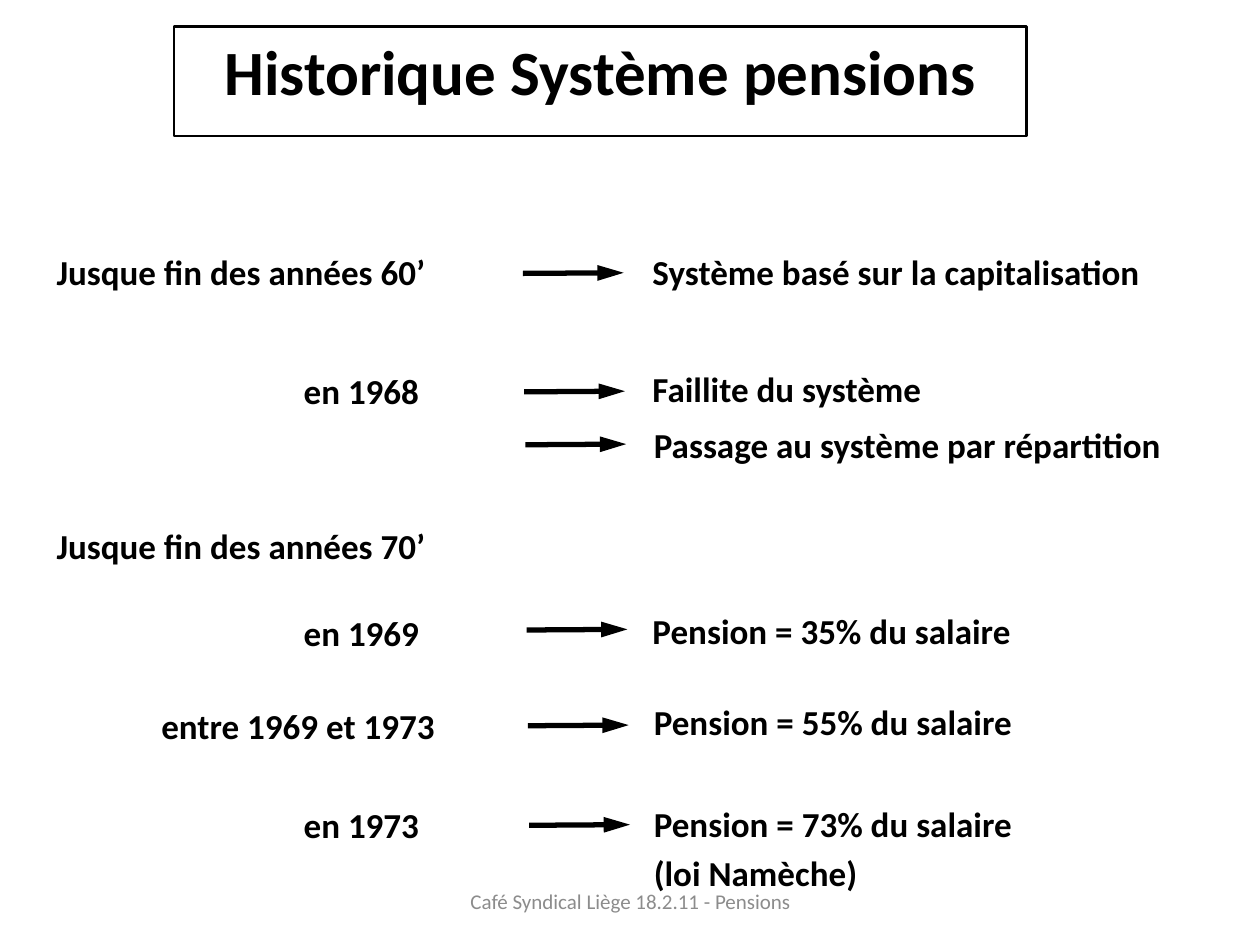
from lxml.etree import SubElement
from pptx import Presentation
from pptx.dml.color import RGBColor
from pptx.enum.shapes import MSO_CONNECTOR, MSO_SHAPE
from pptx.enum.text import MSO_ANCHOR, PP_ALIGN
from pptx.oxml.ns import qn
from pptx.util import Inches, Pt

COLORS = {"ink": "000000", "footer": "8C8C8C"}
FONT = "Calibri"

# The page is a grid of 100 columns by 75 rows of square cells.
CELL = Inches(10) // 100
INSET = 1
BOX_ROWS = 5.5
ARROW_COLUMNS = 8
ARROW_RISE = 0.05

# text, left column, top row, indent in columns
PERIODS = [
    ("Jusque fin des années 60’", 3.5, 19.4, 0),
    ("en 1968", 4.3, 28.8, 18.8),
    ("Jusque fin des années 70’", 3.5, 41.1, 0),
    ("en 1969", 4.3, 48, 18.8),
    ("entre 1969 et 1973", 4.3, 55.4, 7.5),
    ("en 1973", 4.3, 63.3, 18.8),
]
# text, left column, top row, width in columns
OUTCOMES = [
    ("Système basé sur la capitalisation", 50.8, 19.4, 47.2),
    ("Faillite du système", 50.8, 28.7, 47.2),
    ("Passage au système par répartition", 50.9, 33.1, 49.1),
    ("Pension = 35% du salaire", 50.8, 47.9, 47.2),
    ("Pension = 55% du salaire", 50.9, 55.1, 47.2),
    ("Pension = 73% du salaire", 50.9, 63.2, 47.2),
    ("(loi Namèche)", 50.9, 67.1, 47.2),
]
ARROW_ROWS = [21.7, 31.1, 35.3, 50, 57.6, 65.5]


def cells(*counts):
    return [round(count * CELL) for count in counts]


def write(shape, text, size, color="ink", bold=True, align=PP_ALIGN.LEFT,
          anchor=MSO_ANCHOR.TOP, indent=0):
    frame = shape.text_frame
    frame.word_wrap = True
    frame.vertical_anchor = anchor
    frame.margin_left, = cells(INSET + indent)
    para = frame.paragraphs[0]
    para.text = text
    para.alignment = align
    para.font.name = FONT
    para.font.size = Pt(size)
    para.font.bold = bold
    para.font.color.rgb = RGBColor.from_string(COLORS[color])


def add_title(page, box):
    frame = page.shapes.add_shape(MSO_SHAPE.RECTANGLE, *cells(*box))
    frame.shadow.inherit = False
    frame.fill.background()
    frame.line.color.rgb = RGBColor.from_string(COLORS["ink"])
    frame.line.width = Pt(1.5)
    write(frame, "Historique Système pensions", 36, align=PP_ALIGN.CENTER)


def add_entry(page, box, text, indent=0):
    write(page.shapes.add_textbox(*cells(*box)), text, 20, indent=indent)


def add_arrow(page, left, row):
    arrow = page.shapes.add_connector(
        MSO_CONNECTOR.STRAIGHT,
        *cells(left, row, left + ARROW_COLUMNS, row - ARROW_RISE))
    arrow.line.color.rgb = RGBColor.from_string(COLORS["ink"])
    arrow.line.width = Pt(3)
    SubElement(arrow.line._get_or_add_ln(), qn("a:tailEnd"),
               type="triangle", w="med", len="lg")
    SubElement(arrow._element.spPr, qn("a:effectLst"))


def add_timeline(page):
    for text, left, top, indent in PERIODS:
        add_entry(page, (left, top, 37.8, BOX_ROWS), text, indent)
    for index, row in enumerate(ARROW_ROWS):
        add_arrow(page, 41.5 + 0.1 * index, row)
    for text, left, top, width in OUTCOMES:
        add_entry(page, (left, top, width, BOX_ROWS), text)


def add_footer(page, box):
    write(page.shapes.add_textbox(*cells(*box)),
          "Café Syndical Liège 18.2.11 - Pensions", 12, "footer", bold=False,
          align=PP_ALIGN.CENTER, anchor=MSO_ANCHOR.MIDDLE)


def main():
    deck = Presentation()
    deck.slide_width, deck.slide_height = cells(100, 75)
    page = deck.slides.add_slide(deck.slide_layouts[6])
    add_title(page, (13.8, 2.1, 67.7, 8.7))
    add_timeline(page)
    add_footer(page, (34.2, 69.5, 31.7, 4))
    deck.save("out.pptx")


if __name__ == "__main__":
    main()
